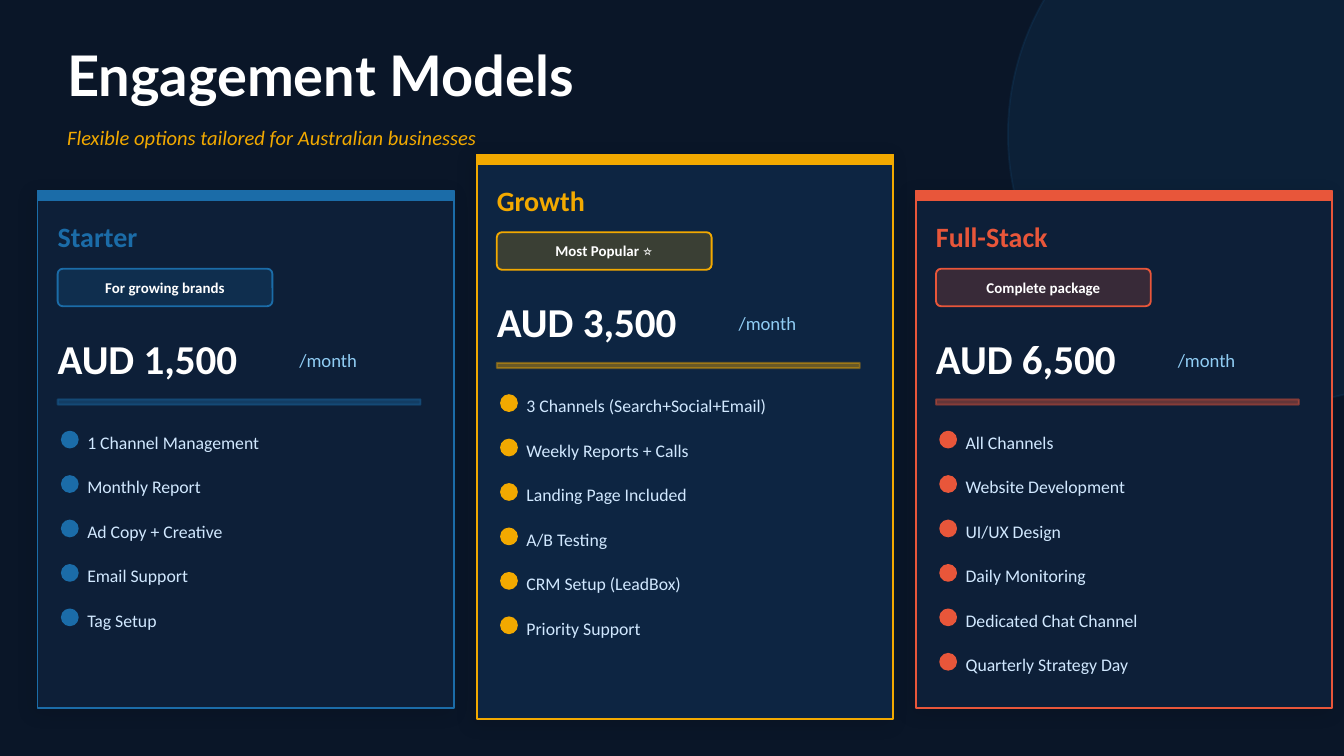
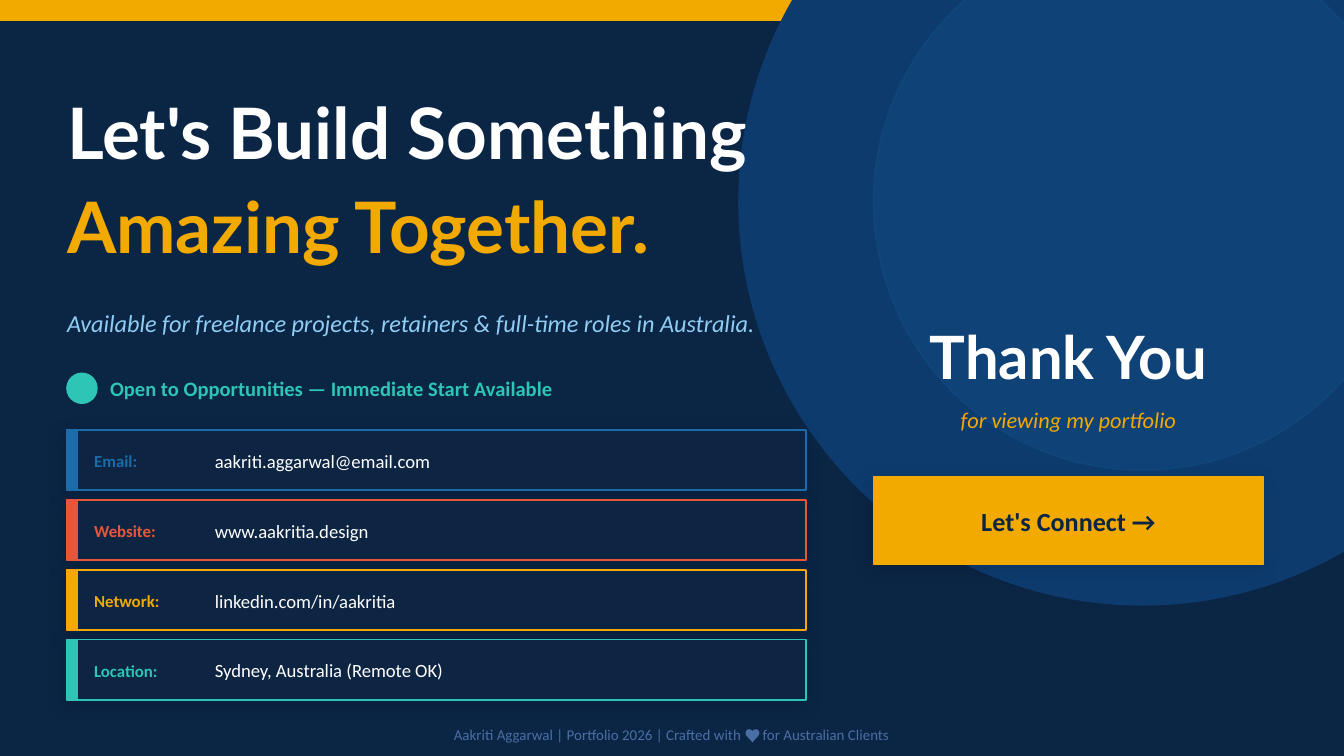
from dataclasses import dataclass

from lxml.etree import SubElement
from pptx import Presentation
from pptx.dml.color import RGBColor
from pptx.enum.shapes import MSO_SHAPE
from pptx.enum.text import MSO_ANCHOR, PP_ALIGN
from pptx.oxml.ns import qn
from pptx.util import Cm, Pt


@dataclass(frozen=True)
class Theme:
    night: str = "0A1628"
    navy: str = "0B2545"
    card: str = "0D1F38"
    panel: str = "0D2542"
    deep: str = "0D3B6E"
    blue: str = "1B6CA8"
    gold: str = "F2A900"
    coral: str = "E8563A"
    teal: str = "2EC4B6"
    white: str = "FFFFFF"
    sky: str = "90CDF4"
    pale: str = "D1E8FF"
    slate: str = "4A6FA5"
    head: str = "Lato"
    body: str = "Calibri"
    hero: float = 38
    thanks: float = 32
    title: float = 30
    price: float = 22
    plan: float = 15
    button: float = 14
    lead: float = 13
    close: float = 12
    sub: float = 11
    text: float = 10
    item: float = 9.5
    label: float = 9
    small: float = 8


T = Theme()
WIDE, HIGH = 25.4, 14.29
EDGE = 1.27
BAND = 0.18


def rgb(code):
    return RGBColor.from_string(code)


def fade(part, share):
    """Set the opacity, in percent, of every colour inside an XML part."""
    for color in part.iter(qn("a:srgbClr")):
        SubElement(color, qn("a:alpha"), val=str(share * 1000))


def cast(shape):
    """Give a shape the soft shadow that cards and buttons share."""
    effects = shape.element.spPr.find(qn("a:effectLst"))
    shadow = SubElement(effects, qn("a:outerShdw"), blurRad=str(Pt(10)),
                        dist=str(Pt(3)), dir=str(135 * 60000))
    color = SubElement(shadow, qn("a:srgbClr"), val="000000")
    SubElement(color, qn("a:alpha"), val="12000")


def write(shape, text, size=T.text, color=T.white, font=T.body,
          bold=False, italic=False, align=PP_ALIGN.LEFT):
    frame = shape.text_frame
    frame.word_wrap = True
    frame.vertical_anchor = MSO_ANCHOR.MIDDLE
    frame.margin_left = frame.margin_right = 0
    frame.margin_top = frame.margin_bottom = 0
    para = frame.paragraphs[0]
    para.alignment = align
    run = para.add_run()
    run.text = text
    run.font.size = Pt(size)
    run.font.name = font
    run.font.bold = bold
    run.font.italic = italic
    run.font.color.rgb = rgb(color)


def note(slide, text, x, y, w, h, **style):
    box = slide.shapes.add_textbox(Cm(x), Cm(y), Cm(w), Cm(h))
    write(box, text, **style)


def block(slide, kind, x, y, w, h, fill, line=None, alpha=None,
          edge=None, lift=False):
    """Draw a shape; alpha and edge are the opacity of fill and line."""
    shape = slide.shapes.add_shape(kind, Cm(x), Cm(y), Cm(w), Cm(h))
    shape.shadow.inherit = False
    shape.fill.solid()
    shape.fill.fore_color.rgb = rgb(fill)
    shape.line.color.rgb = rgb(line or fill)
    shape.line.width = Pt(1)
    props = shape.element.spPr
    if alpha:
        fade(props.find(qn("a:solidFill")), alpha)
    if edge:
        fade(props.find(qn("a:ln")), edge)
    if lift:
        cast(shape)
    return shape


def rect(slide, *place, **style):
    return block(slide, MSO_SHAPE.RECTANGLE, *place, **style)


def disc(slide, x, y, size, fill, **style):
    return block(slide, MSO_SHAPE.OVAL, x, y, size, size, fill, **style)


def badge(slide, text, x, y, color):
    shape = block(slide, MSO_SHAPE.ROUNDED_RECTANGLE, x, y, 4.06, 0.71,
                  fill=color, alpha=20)
    shape.adjustments[0] = 0.14
    write(shape, text, size=T.small, bold=True, align=PP_ALIGN.CENTER)


def plan(slide, x, y, h, fill, color, name, tag, price, items):
    """Draw one price card."""
    rect(slide, x, y, 7.87, h, fill=fill, line=color, lift=True)
    rect(slide, x, y, 7.87, BAND, fill=color)
    left = x + 0.38
    note(slide, name, left, y + 0.38, 7.24, 0.97,
         size=T.plan, color=color, bold=True)
    badge(slide, tag, left, y + 1.47, color)
    note(slide, price, left, y + 2.49, 4.57, 1.32, size=T.price, bold=True)
    note(slide, "/month", left + 4.57, y + 2.84, 2.54, 0.71, color=T.sky)
    rect(slide, left, y + 3.94, 6.86, 0.1, fill=color, alpha=40, edge=40)
    for row, item in enumerate(items):
        top = y + 4.37 + row * 0.84
        disc(slide, left + 0.08, top + 0.18, 0.3, color)
        note(slide, item, left + 0.56, top, 6.48, 0.76,
             size=T.item, color=T.pale)


def contact(slide, y, color, label, value):
    rect(slide, EDGE, y, 13.97, 1.14, fill=T.panel, line=color, lift=True)
    rect(slide, EDGE, y, BAND, 1.14, fill=color)
    note(slide, label, 1.78, y + 0.23, 2.16, 0.71,
         size=T.label, color=color, bold=True)
    note(slide, value, 4.06, y + 0.23, 10.67, 0.71)


def page(deck, color):
    slide = deck.slides.add_slide(deck.slide_layouts[6])
    slide.background.fill.solid()
    slide.background.fill.fore_color.rgb = rgb(color)
    return slide


def models(deck):
    slide = page(deck, T.night)
    disc(slide, 19.05, -2.54, 10.16, T.blue, alpha=12, edge=12)
    note(slide, "Engagement Models", EDGE, 0.71, 22.86, 1.4,
         size=T.title, font=T.head, bold=True)
    note(slide, "Flexible options tailored for Australian businesses",
         EDGE, 2.16, 22.86, 0.89, size=T.sub, color=T.gold, italic=True)
    side = (3.61, 9.78, T.card)
    front = (2.92, 10.67, T.panel)
    plans = [
        (*side, T.blue, "Starter", "For growing brands", "AUD 1,500",
         ["1 Channel Management", "Monthly Report", "Ad Copy + Creative",
          "Email Support", "Tag Setup"]),
        (*front, T.gold, "Growth", "Most Popular ⭐", "AUD 3,500",
         ["3 Channels (Search+Social+Email)", "Weekly Reports + Calls",
          "Landing Page Included", "A/B Testing", "CRM Setup (LeadBox)",
          "Priority Support"]),
        (*side, T.coral, "Full-Stack", "Complete package", "AUD 6,500",
         ["All Channels", "Website Development", "UI/UX Design",
          "Daily Monitoring", "Dedicated Chat Channel",
          "Quarterly Strategy Day"]),
    ]
    for col, data in enumerate(plans):
        plan(slide, 0.71 + col * 8.3, *data)


def closing(deck):
    slide = page(deck, T.navy)
    rect(slide, 0, 0, WIDE, 0.38, fill=T.gold)
    disc(slide, 13.97, -3.81, 15.24, T.deep)
    disc(slide, 16.51, -1.27, 10.16, T.blue, alpha=15, edge=15)

    hero = dict(size=T.hero, font=T.head, bold=True)
    note(slide, "Let's Build Something", EDGE, 1.52, 17.78, 1.9, **hero)
    note(slide, "Amazing Together.", EDGE, 3.3, 17.78, 1.9,
         color=T.gold, **hero)
    note(slide, "Available for freelance projects, retainers & full-time "
         "roles in Australia.", EDGE, 5.59, 16.51, 1.02,
         size=T.lead, color=T.sky, italic=True)
    disc(slide, EDGE, 7.06, 0.56, T.teal)
    note(slide, "Open to Opportunities — Immediate Start Available",
         2.08, 6.98, 13.97, 0.71, size=T.sub, color=T.teal, bold=True)

    rows = [
        (T.blue, "Email:", "aakriti.aggarwal@email.com"),
        (T.coral, "Website:", "www.aakritia.design"),
        (T.gold, "Network:", "linkedin.com/in/aakritia"),
        (T.teal, "Location:", "Sydney, Australia (Remote OK)"),
    ]
    for row, data in enumerate(rows):
        contact(slide, 8.13 + row * 1.32, *data)

    mid = dict(align=PP_ALIGN.CENTER)
    note(slide, "Thank You", 15.75, 5.84, 8.89, 1.78,
         size=T.thanks, font=T.head, bold=True, **mid)
    note(slide, "for viewing my portfolio", 15.75, 7.49, 8.89, 0.89,
         size=T.close, color=T.gold, italic=True, **mid)
    button = rect(slide, 16.51, 9.02, 7.37, 1.65, fill=T.gold, lift=True)
    write(button, "Let's Connect →", size=T.button, color=T.navy,
          bold=True, **mid)
    note(slide, "Aakriti Aggarwal | Portfolio 2026 | "
         "Crafted with ♥ for Australian Clients", 0, 13.51, WIDE, 0.76,
         size=T.small, color=T.slate, **mid)


def main():
    deck = Presentation()
    deck.slide_width = Cm(WIDE)
    deck.slide_height = Cm(HIGH)
    models(deck)
    closing(deck)
    deck.save("out.pptx")


if __name__ == "__main__":
    main()
